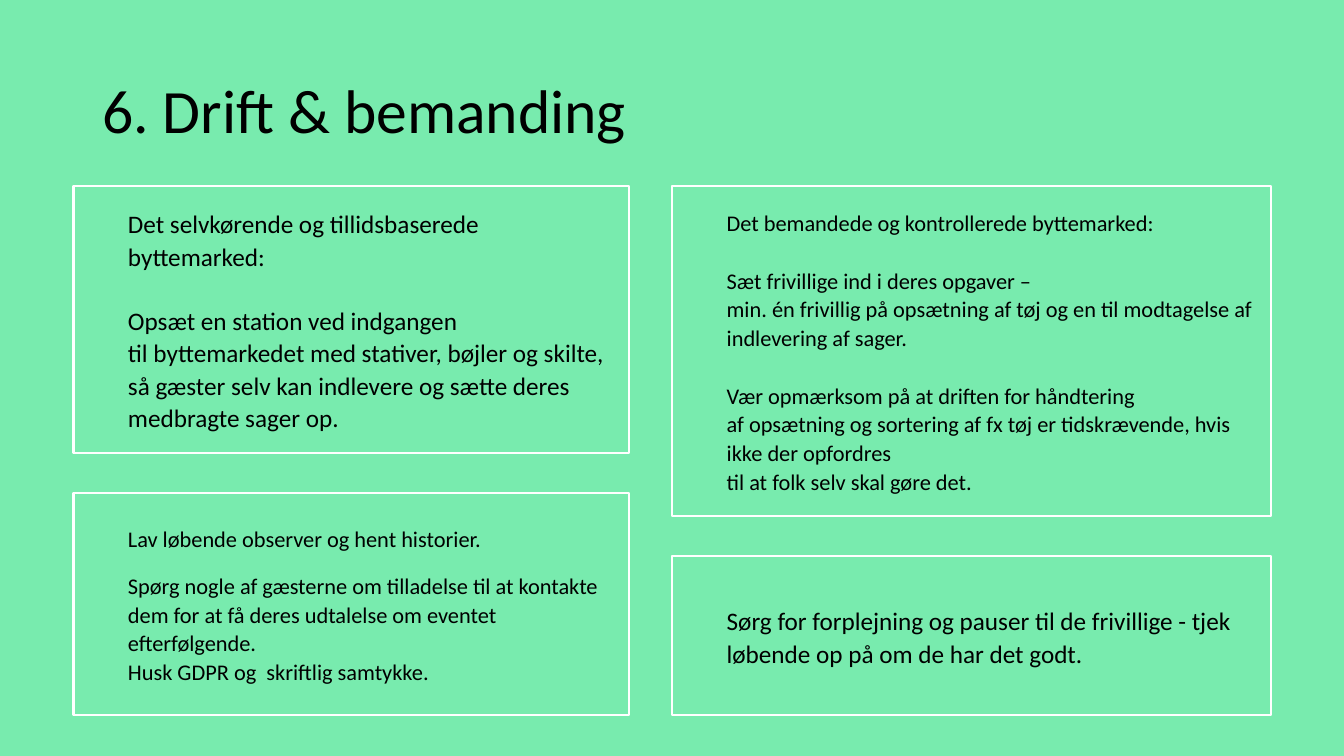
import pptx
import pptx.dml.color
import pptx.enum.shapes
import pptx.enum.text
import pptx.util

Pt = pptx.util.Pt
MINT = pptx.dml.color.RGBColor(0x78, 0xEB, 0xAE)
WHITE = pptx.dml.color.RGBColor(0xFF, 0xFF, 0xFF)
BLACK = pptx.dml.color.RGBColor(0x00, 0x00, 0x00)

SLIDE_WIDTH, SLIDE_HEIGHT = 960, 540
TOP, BOTTOM, ROW_GAP = 133, 511, 28.6

SELF_RUN = [
    "Det selvkørende og tillidsbaserede byttemarked:",
    "Opsæt en station ved indgangen\ntil byttemarkedet med stativer, bøjler og skilte, "
    "så gæster selv kan indlevere og sætte deres medbragte sager op.",
]
STORIES = [
    "Lav løbende observer og hent historier.",
    "Spørg nogle af gæsterne om tilladelse til at kontakte dem for at få deres "
    "udtalelse om eventet efterfølgende.\nHusk GDPR og  skriftlig samtykke.",
]
STAFFED = [
    "Det bemandede og kontrollerede byttemarked:",
    "Sæt frivillige ind i deres opgaver –\nmin. én frivillig på opsætning af tøj og en "
    "til modtagelse af indlevering af sager.",
    "Vær opmærksom på at driften for håndtering\naf opsætning og sortering af fx tøj er "
    "tidskrævende, hvis ikke der opfordres\ntil at folk selv skal gøre det.",
]
CATERING = [
    "Sørg for forplejning og pauser til de frivillige - tjek løbende op på om de har det godt.",
]
COLUMNS = [
    (52.5, 396.7, [
        (190.4, SELF_RUN, 18, 18, 0),
        (159, STORIES, 16, 8, 8),
    ]),
    (480.2, 427.7, [
        (235.6, STAFFED, 16, 15.5, 8),
        (113.8, CATERING, 18, 8, 8),
    ]),
]


def set_attributes(target, values):
    """Set every attribute named in values on the target."""
    for name, value in values.items():
        setattr(target, name, value)


def add_background(slide, left, top, width, height):
    """Cover the given box with the mint colour."""
    backdrop = slide.shapes.add_shape(
        pptx.enum.shapes.MSO_SHAPE.RECTANGLE, Pt(left), Pt(top), Pt(width), Pt(height))
    backdrop.shadow.inherit = False
    backdrop.fill.solid()
    backdrop.fill.fore_color.rgb = MINT
    backdrop.line.fill.background()


def add_heading(slide, left, top, width, height):
    """Place the heading in the vertical middle of the given box."""
    heading = slide.shapes.add_textbox(Pt(left), Pt(top), Pt(width), Pt(height))
    set_attributes(heading.text_frame, {
        "word_wrap": True, "vertical_anchor": pptx.enum.text.MSO_ANCHOR.MIDDLE})
    line = heading.text_frame.paragraphs[0]
    line.text = "6. Drift & bemanding"
    line.line_spacing = 0.9
    set_attributes(line.font, {"name": "Calibri", "size": Pt(44)})
    line.font.color.rgb = BLACK


def add_advice(slide, left, top, width, height, passages, size, gap, end_gap):
    """Draw a white frame in the given box and fill it with indented passages."""
    frame = slide.shapes.add_shape(
        pptx.enum.shapes.MSO_SHAPE.RECTANGLE, Pt(left), Pt(top), Pt(width), Pt(height))
    frame.shadow.inherit = False
    frame.fill.background()
    frame.line.color.rgb = WHITE
    frame.line.width = Pt(1.5)
    set_attributes(frame.text_frame, {
        "word_wrap": True, "vertical_anchor": pptx.enum.text.MSO_ANCHOR.MIDDLE,
        "margin_left": Pt(2.9), "margin_right": Pt(7.2),
        "margin_top": Pt(3.6), "margin_bottom": Pt(3.6)})
    for index, passage in enumerate(passages):
        paragraph = (frame.text_frame.add_paragraph() if index
                     else frame.text_frame.paragraphs[0])
        is_last = index == len(passages) - 1
        set_attributes(paragraph, {
            "text": passage, "level": 1, "alignment": pptx.enum.text.PP_ALIGN.LEFT,
            "line_spacing": 1.07, "space_before": Pt(5),
            "space_after": Pt(end_gap if is_last else gap)})
        set_attributes(paragraph.font, {"name": "Calibri", "size": Pt(size)})
        paragraph.font.color.rgb = BLACK


def add_advice_column(slide, left, top, width, height, boxes):
    """Stack advice boxes in the given box, the last one reaching its bottom."""
    bottom = top + height
    for box_height, *content in boxes:
        add_advice(slide, left, top, width, min(box_height, bottom - top), *content)
        top += box_height + ROW_GAP


def main():
    """Build the slide and save it."""
    presentation = pptx.Presentation()
    set_attributes(presentation, {
        "slide_width": Pt(SLIDE_WIDTH), "slide_height": Pt(SLIDE_HEIGHT)})
    slide = presentation.slides.add_slide(presentation.slide_layouts[6])
    add_background(slide, 0, 0, SLIDE_WIDTH, SLIDE_HEIGHT)
    add_heading(slide, 66, 28.8, 828, 104.4)
    for left, width, boxes in COLUMNS:
        add_advice_column(slide, left, TOP, width, BOTTOM - TOP, boxes)
    presentation.save("out.pptx")


if __name__ == "__main__":
    main()
